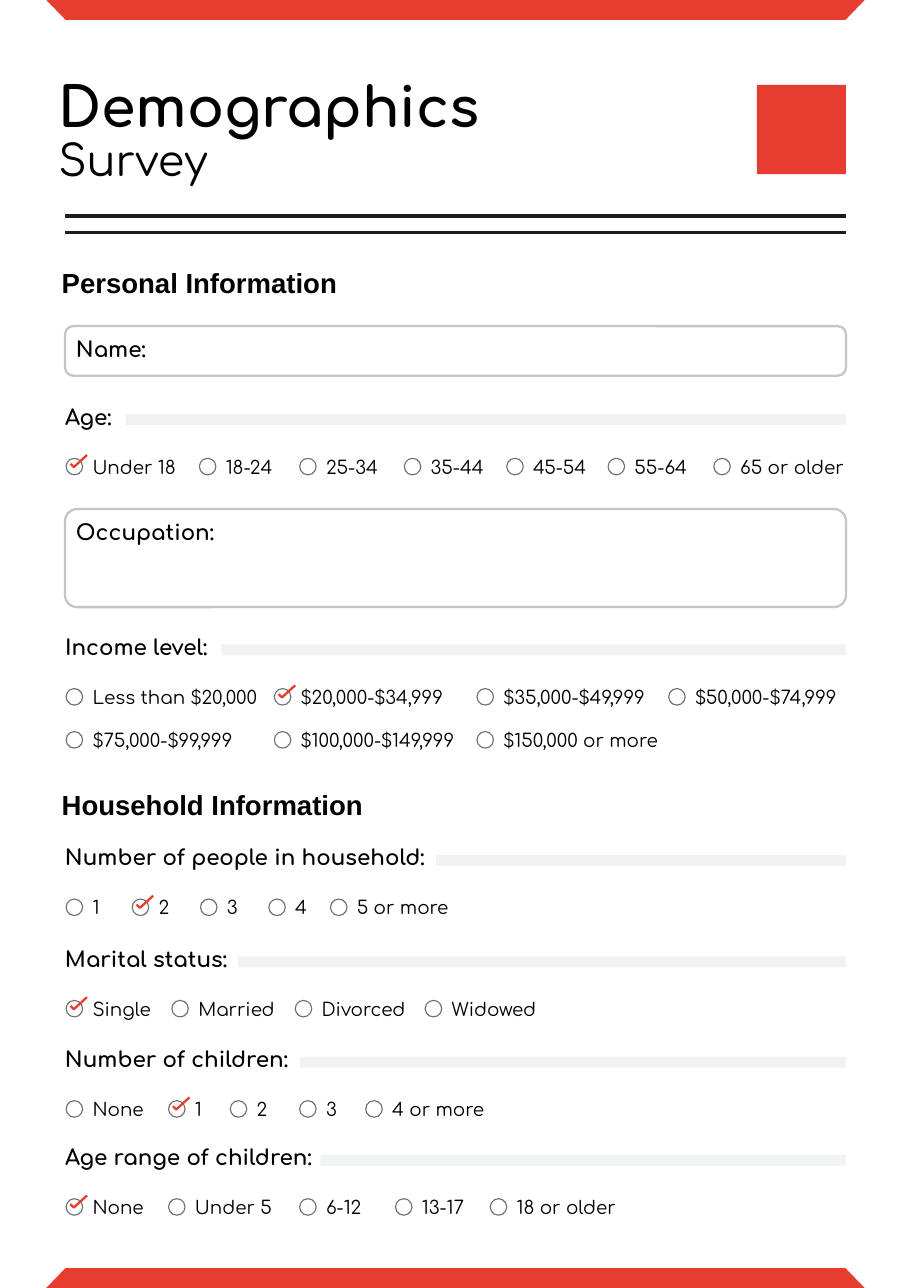
from pptx import Presentation
from pptx.dml.color import RGBColor
from pptx.enum.shapes import MSO_CONNECTOR, MSO_SHAPE
from pptx.oxml.ns import qn
from pptx.util import Inches, Pt

RECTANGLE = MSO_SHAPE.RECTANGLE
ROUNDED = MSO_SHAPE.ROUNDED_RECTANGLE
TRAPEZOID = MSO_SHAPE.TRAPEZOID
OVAL = MSO_SHAPE.OVAL
STRAIGHT = MSO_CONNECTOR.STRAIGHT

COLORS = {"accent": "E73C30", "ink": "000000", "rule": "1D1D1B",
          "frame": "C6C6C6", "bar": "F0F2F4", "circle": "706F6F"}
BODY_FONT, HEADING_FONT = "Comfortaa", "Arial"

TITLE = [("Demographics", 36, True), ("Survey", 28, False)]
RULES = [(1.96, 3), (2.11, 1.5)]  # top, weight
HEADINGS = [("Personal Information", 2.45), ("Household Information", 7.19)]
FIELDS = [("Name:", 2.96, 0.45, 0.167), ("Occupation:", 4.62, 0.89, 0.123)]

# Each question: label, top, left edge of its bar, columns, rows of options, ticked option
QUESTIONS = [
    ("Age:", 3.69, 1.14, [0.6, 1.81, 2.72, 3.67, 4.6, 5.52, 6.48],
     [["Under 18", "18-24", "25-34", "35-44", "45-54", "55-64", "65 or older"]],
     "Under 18"),
    ("Income level:", 5.78, 2.01, [0.6, 2.49, 4.33, 6.07],
     [["Less than $20,000", "$20,000-$34,999", "$35,000-$49,999", "$50,000-$74,999"],
      ["$75,000-$99,999", "$100,000-$149,999", "$150,000 or more"]],
     "$20,000-$34,999"),
    ("Number of people in household:", 7.69, 3.96, [0.6, 1.2, 1.82, 2.44, 3],
     [["1", "2", "3", "4", "5 or more"]], "2"),
    ("Marital status:", 8.61, 2.16, [0.6, 1.56, 2.68, 3.86],
     [["Single", "Married", "Divorced", "Widowed"]], "Single"),
    ("Number of children:", 9.52, 2.72, [0.6, 1.53, 2.09, 2.72, 3.32],
     [["None", "1", "2", "3", "4 or more"]], "1"),
    ("Age range of children:", 10.41, 2.91, [0.6, 1.53, 2.72, 3.59, 4.45],
     [["None", "Under 5", "6-12", "13-17", "18 or older"]], "None"),
]

WIDTH, HEIGHT = 8.27, 11.69
LEFT, RIGHT = 0.59, 7.68
BAND_LEFT, BAND_HEIGHT = 0.42, 0.18
EMBLEM_TOP, EMBLEM_SIZE = 0.77, 0.81
BAR_DROP, BAR_HEIGHT = 0.07, 0.1
OPTION_DROP, OPTION_PITCH = 0.47, 0.39
CIRCLE, OPTION_INDENT = 0.15, 0.24
TICK = [(0.19, -0.03), (0.07, 0.08), (0.04, 0.05)]

deck = Presentation()
deck.slide_width, deck.slide_height = Inches(WIDTH), Inches(HEIGHT)
page = deck.slides.add_slide(deck.slide_layouts[6])


def color(name):
    return RGBColor.from_string(COLORS[name])


def paint(shape, fill=None, line=None, weight=0):
    shape.shadow.inherit = False
    if fill:
        shape.fill.solid()
        shape.fill.fore_color.rgb = color(fill)
    else:
        shape.fill.background()
    if line:
        shape.line.color.rgb = color(line)
        shape.line.width = Pt(weight)
    else:
        shape.line.fill.background()


def add_shape(kind, left, top, width, height, adjust=None, **style):
    shape = page.shapes.add_shape(
        kind, Inches(left), Inches(top), Inches(width), Inches(height))
    if adjust is not None:
        shape.adjustments[0] = adjust
    paint(shape, **style)
    return shape


def add_text(lines, left, top, width, height, font=BODY_FONT):
    """Write lines of (wording, size, bold) in a box without margins."""
    frame = page.shapes.add_textbox(
        Inches(left), Inches(top), Inches(width), Inches(height)).text_frame
    frame.word_wrap = True
    frame.margin_left = frame.margin_right = frame.margin_top = frame.margin_bottom = 0
    frame.text = "\n".join(wording for wording, _, _ in lines)
    for para, (_, size, bold) in zip(frame.paragraphs, lines):
        para.line_spacing = 0.9
        for span in para.runs:
            span.font.name = font
            span.font.size = Pt(size)
            span.font.bold = bold
            span.font.color.rgb = color("ink")


def add_option(label, left, top, limit, ticked):
    add_shape(OVAL, left, top, CIRCLE, CIRCLE, line="circle", weight=0.75)
    text_left = left + OPTION_INDENT
    add_text([(label, 12, False)], text_left, top, limit - text_left, 0.18)
    if ticked:
        points = [(Inches(left + x), Inches(top + y)) for x, y in TICK]
        builder = page.shapes.build_freeform(*points[0])
        builder.add_line_segments(points[1:], close=False)
        paint(builder.convert_to_shape(), line="accent", weight=1.5)


def add_question(label, top, bar_left, columns, rows, ticked):
    add_text([(label, 14, True)], LEFT, top, bar_left - LEFT, 0.21)
    add_shape(RECTANGLE, bar_left, top + BAR_DROP, RIGHT - bar_left, BAR_HEIGHT, fill="bar")
    limits = columns[1:] + [RIGHT + 0.1]
    for index, row in enumerate(rows):
        option_top = top + OPTION_DROP + index * OPTION_PITCH
        for option, left, limit in zip(row, columns, limits):
            add_option(option, left, option_top, limit, option == ticked)


for band_top, turn in [(0, 180), (HEIGHT - BAND_HEIGHT, 0)]:
    band = add_shape(TRAPEZOID, BAND_LEFT, band_top, WIDTH - 2 * BAND_LEFT,
                     BAND_HEIGHT, adjust=0.97, fill="accent")
    band.rotation = turn

add_text(TITLE, 0.53, 0.73, 4.32, 0.97)
add_shape(RECTANGLE, RIGHT - EMBLEM_SIZE, EMBLEM_TOP, EMBLEM_SIZE, EMBLEM_SIZE, fill="accent")

for rule_top, weight in RULES:
    rule = page.shapes.add_connector(
        STRAIGHT, Inches(LEFT), Inches(rule_top), Inches(RIGHT), Inches(rule_top))
    rule.line.color.rgb = color("rule")
    rule.line.width = Pt(weight)
    properties = rule.element.spPr
    properties.append(properties.makeelement(qn("a:effectLst"), {}))

for heading, heading_top in HEADINGS:
    add_text([(heading, 18, True)], 0.56, heading_top, 3.28, 0.27, HEADING_FONT)

for label, field_top, field_height, corner in FIELDS:
    add_shape(ROUNDED, LEFT, field_top, RIGHT - LEFT, field_height,
              adjust=corner, line="frame", weight=1.5)
    add_text([(label, 14, True)], LEFT + 0.1, field_top + 0.12, 1.7, 0.21)

for question in QUESTIONS:
    add_question(*question)

deck.save("out.pptx")
